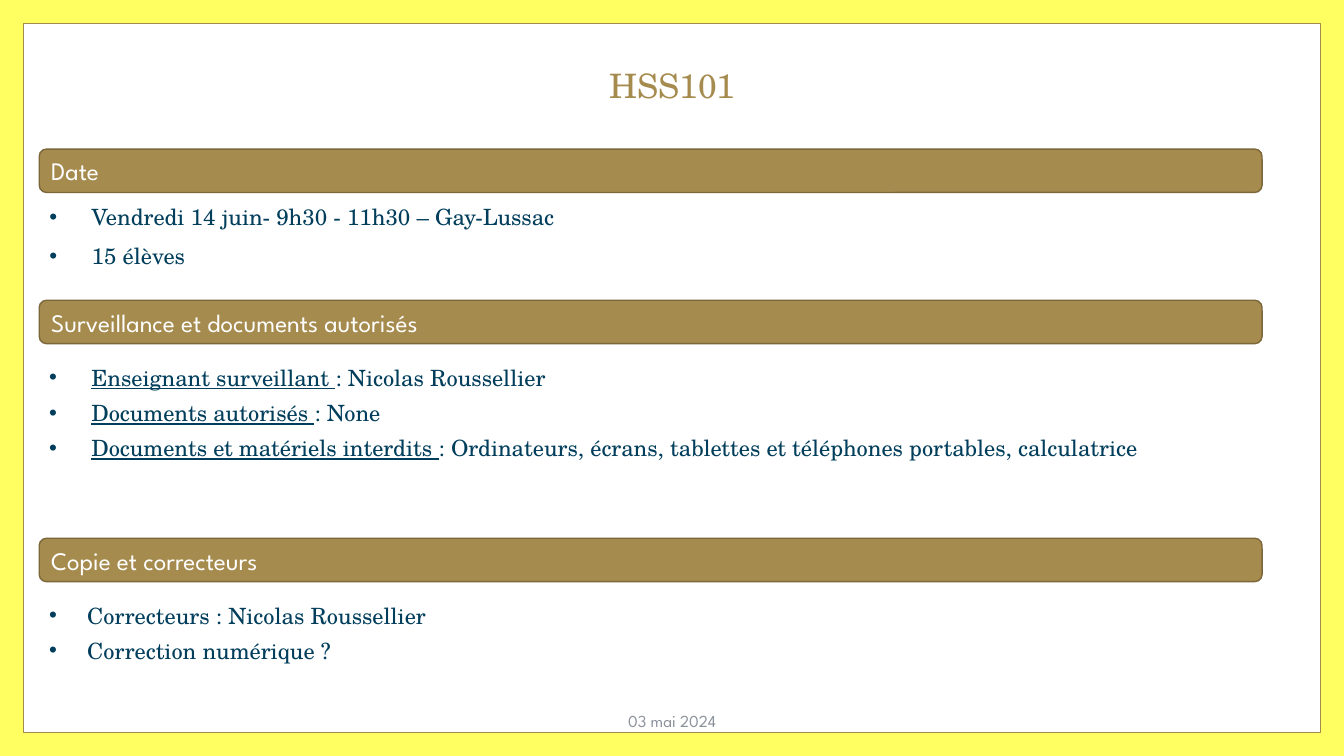
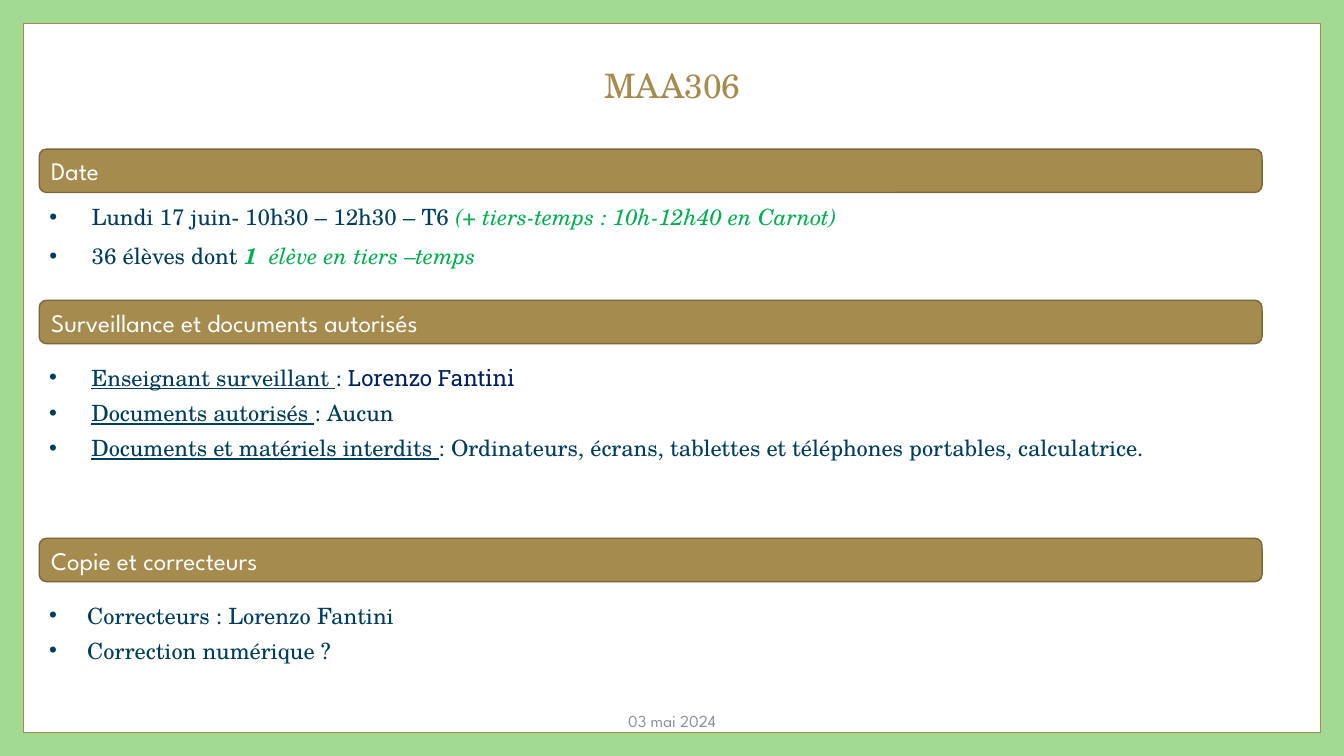
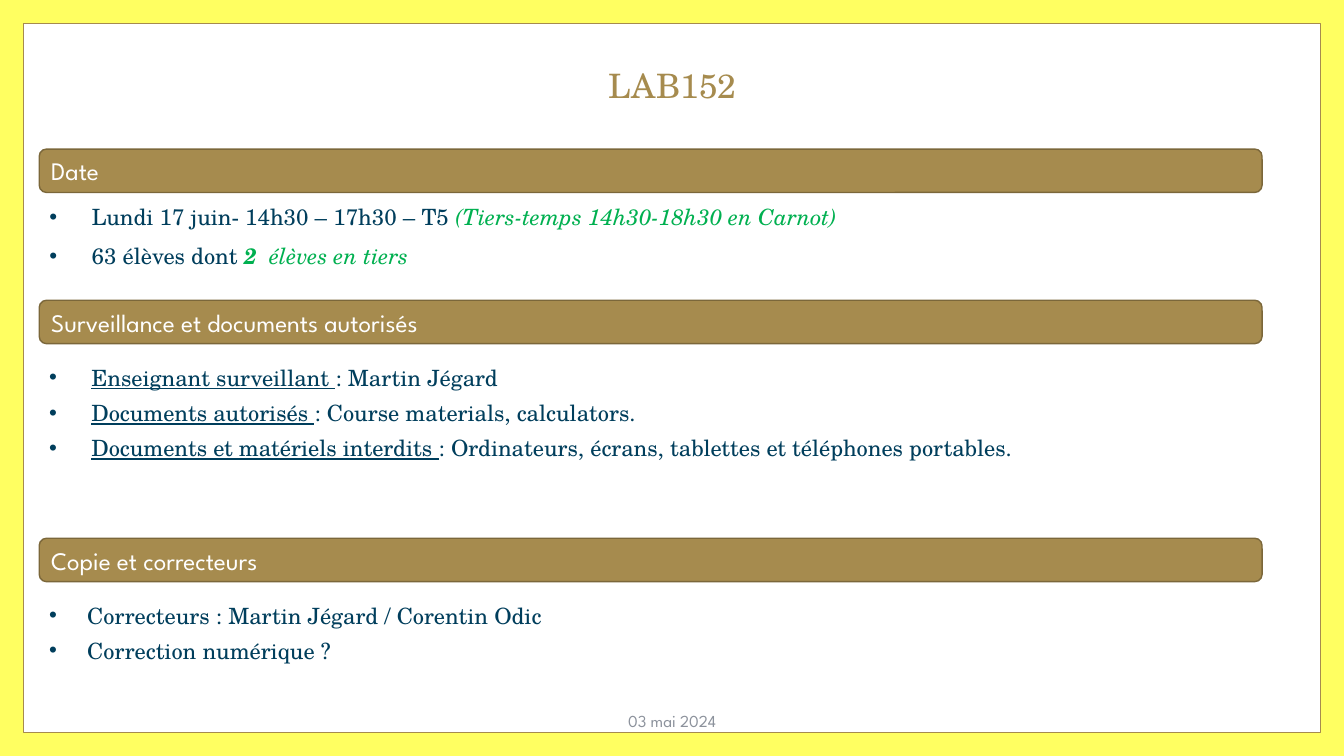
"""Build three exam sheets that share one frame, title style and set of bands."""
from lxml.etree import SubElement
from pptx import Presentation
from pptx.dml.color import RGBColor as Rgb
from pptx.enum.shapes import MSO_SHAPE as Form
from pptx.enum.text import MSO_ANCHOR as Anchor, PP_ALIGN as Align
from pptx.oxml.ns import qn
from pptx.util import Pt

GOLD, EDGE, WHITE = "A68B4E", "7B673A", "FFFFFF"
NAVY, GREEN, BLUE, GREY = "003E5C", "00B050", "002060", "8C929C"
YELLOW, MINT = "FFFF61", "A2D993"
SERIF, SANS, SLAB = "TeX Gyre Schola", "League Spartan", "Roboto Slab"

STYLES = {
    "plain": (SERIF, 16, NAVY),
    "under": (SERIF, 16, NAVY),
    "extra": (SERIF, 16, GREEN),
    "count": (SERIF, 16, GREEN),
    "name": (SLAB, 16, BLUE),
    "title": (SERIF, 24, GOLD),
    "band": (SANS, 18, WHITE),
    "foot": (SANS, 12, GREY),
}

LEFT, BAND_W, BAND_H = 28, 873.5, 31
BANDS = [
    ("Date", 106.5),
    ("Surveillance et documents autorisés", 214.5),
    ("Copie et correcteurs", 384.5),
]
BODIES = [
    (35.3, 147.6, 903.6, 124.5, 30.2, 10, 0.9),
    (LEFT, 256.3, 903.6, 77.8, 30.2, 6, 1),
    (LEFT, 426.2, 889.2, 51.8, 27.2, 6, 1),
]
LABELS = [
    (66.3, 16.5, 828, 91.5, "title", 0.9),
    (318.2, 500.4, 324, 28.8, "foot", 1),
]
DAY = "03 mai 2024"
BANNED = "Ordinateurs, écrans, tablettes et téléphones portables"

EXAMS = [
    {
        "title": "HSS101", "back": YELLOW,
        "date": [
            [("Vendredi 14 juin- 9h30 - 11h30 – Gay-Lussac", "plain")],
            [("15 élèves", "plain")],
        ],
        "guard": ("Nicolas Roussellier", "plain"),
        "docs": "None", "banned": BANNED + ", calculatrice",
        "marker": "Nicolas Roussellier",
    },
    {
        "title": "MAA306", "back": MINT,
        "date": [
            [("Lundi 17 juin- 10h30 – 12h30 – T6 ", "plain"),
             ("(+ tiers-temps : 10h-12h40 en Carnot)", "extra")],
            [("36 élèves dont", "plain"), (" 1", "count"),
             ("  élève en tiers –temps", "extra")],
        ],
        "guard": ("Lorenzo Fantini", "name"),
        "docs": "Aucun", "banned": BANNED + ", calculatrice.",
        "marker": "Lorenzo Fantini",
    },
    {
        "title": "LAB152", "back": YELLOW,
        "date": [
            [("Lundi 17 juin- 14h30 – 17h30 – T5 ", "plain"),
             ("(Tiers-temps 14h30-18h30 en Carnot)", "extra")],
            [("63 élèves dont", "plain"), (" 2", "count"),
             ("  élèves en tiers", "extra")],
        ],
        "guard": ("Martin Jégard", "plain"),
        "docs": "Course materials, calculators.", "banned": BANNED + ".",
        "marker": "Martin Jégard / Corentin Odic",
    },
]


def hue(code):
    """Turn a hex string into a colour."""
    return Rgb.from_string(code)


def write(para, parts):
    """Add styled runs to a paragraph."""
    for text, style in parts:
        run = para.add_run()
        run.text = text
        face, size, tone = STYLES[style]
        font = run.font
        font.name, font.size, font.color.rgb = face, Pt(size), hue(tone)
        font.underline = style == "under"
        font.italic = style in ("extra", "count")
        font.bold = style == "count"


deck = Presentation()
deck.slide_width, deck.slide_height = Pt(960), Pt(540)

for exam in EXAMS:
    slide = deck.slides.add_slide(deck.slide_layouts[6])
    slide.background.fill.solid()
    slide.background.fill.fore_color.rgb = hue(exam["back"])
    shapes = slide.shapes

    panel = shapes.add_shape(Form.RECTANGLE, Pt(17), Pt(16.5), Pt(926), Pt(507))
    panel.shadow.inherit = False
    panel.fill.solid()
    panel.fill.fore_color.rgb = hue(WHITE)
    panel.line.color.rgb = hue(GOLD)
    panel.line.width = Pt(0.75)

    for (x, y, w, h, style, lead), text in zip(LABELS, (exam["title"], DAY)):
        frame = shapes.add_textbox(Pt(x), Pt(y), Pt(w), Pt(h)).text_frame
        frame.word_wrap = True
        frame.vertical_anchor = Anchor.MIDDLE
        para = frame.paragraphs[0]
        para.alignment = Align.CENTER
        para.line_spacing = lead
        write(para, [(text, style)])

    rules = [
        [("Enseignant surveillant ", "under"), (": ", "plain"), exam["guard"]],
        [("Documents autorisés ", "under"), (": " + exam["docs"], "plain")],
        [("Documents et matériels interdits ", "under"),
         (": " + exam["banned"], "plain")],
    ]
    marks = [
        [("Correcteurs : " + exam["marker"], "plain")],
        [("Correction numérique ?", "plain")],
    ]

    for band, body, lines in zip(BANDS, BODIES, (exam["date"], rules, marks)):
        head, top = band
        bar = shapes.add_shape(Form.ROUNDED_RECTANGLE, Pt(LEFT), Pt(top),
                               Pt(BAND_W), Pt(BAND_H))
        bar.shadow.inherit = False
        bar.fill.solid()
        bar.fill.fore_color.rgb = hue(GOLD)
        bar.line.color.rgb = hue(EDGE)
        bar.line.width = Pt(1)
        bar.text_frame.vertical_anchor = Anchor.MIDDLE
        para = bar.text_frame.paragraphs[0]
        para.alignment = Align.LEFT
        write(para, [(head, "band")])

        x, y, w, h, dent, gap, lead = body
        frame = shapes.add_textbox(Pt(x), Pt(y), Pt(w), Pt(h)).text_frame
        frame.word_wrap = True
        if head == "Date":
            frame.margin_left = frame.margin_top = frame.margin_right = 0
        for rank, parts in enumerate(lines):
            para = frame.add_paragraph() if rank else frame.paragraphs[0]
            props = para._p.get_or_add_pPr()
            props.set("marL", str(Pt(dent)))
            props.set("indent", str(-Pt(dent)))
            SubElement(props, qn("a:buFont"), typeface="Arial")
            SubElement(props, qn("a:buChar"), char="•")
            para.line_spacing = lead
            para.space_before = Pt(gap if rank else 0)
            write(para, parts)

deck.save("out.pptx")
